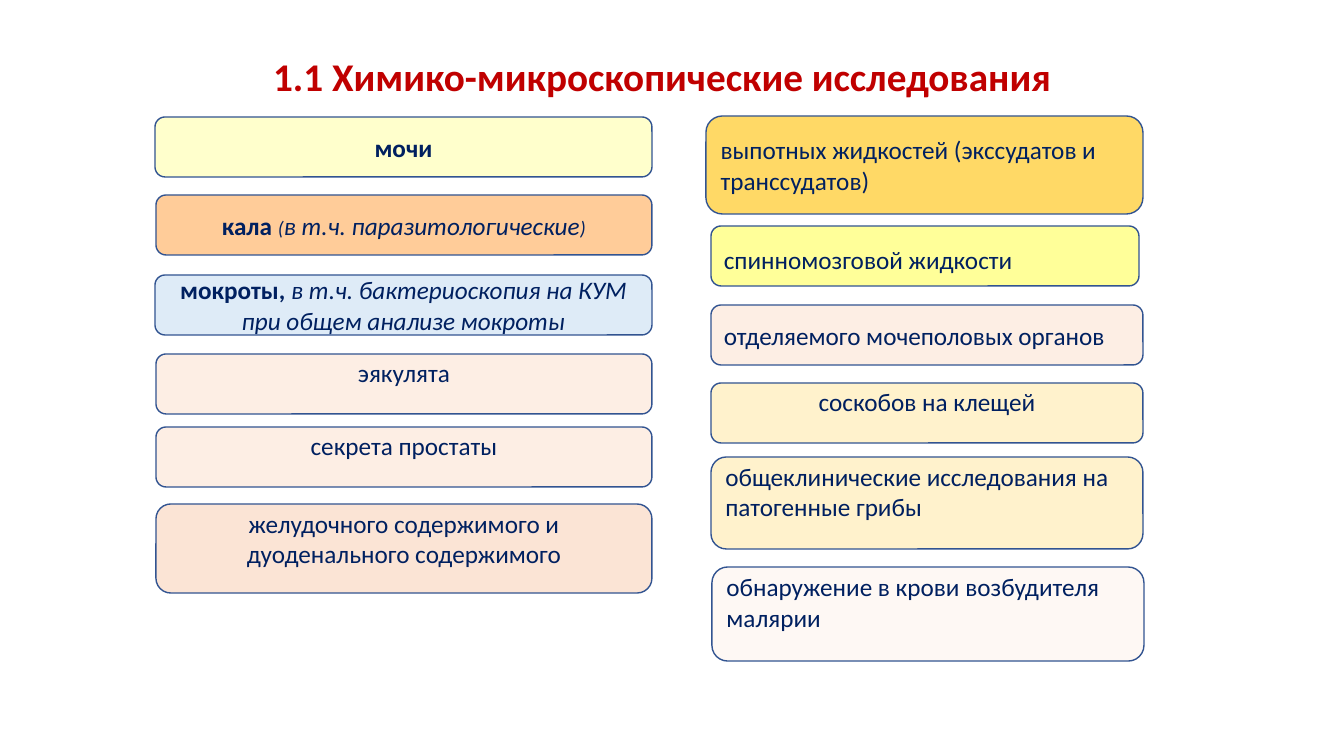
from pptx import Presentation
from pptx import util as u
from pptx.dml.color import RGBColor
from pptx.enum import shapes, text

PX = 12192000 / 1344

RED = RGBColor(0xC0, 0x00, 0x00)
NAVY = RGBColor(0x00, 0x20, 0x60)
EDGE = RGBColor(0x32, 0x54, 0x91)
CREAM = RGBColor(0xFF, 0xFF, 0xCC)
PEACH = RGBColor(0xFF, 0xCC, 0x99)
SKY = RGBColor(0xDE, 0xEB, 0xF7)
BLUSH = RGBColor(0xFD, 0xEE, 0xE4)
ROSE = RGBColor(0xFB, 0xE4, 0xD5)
GOLD = RGBColor(0xFF, 0xD9, 0x66)
LEMON = RGBColor(0xFF, 0xFF, 0x99)
SAND = RGBColor(0xFF, 0xF2, 0xCC)
PEARL = RGBColor(0xFE, 0xF8, 0xF4)

LEFT, MID = text.PP_ALIGN.LEFT, text.PP_ALIGN.CENTER


def px(n):
    return u.Emu(round(n * PX))


def plain(words):
    return [(words, 18, False, False)]


URINE = [("мочи", 18, True, False)]
STOOL = [
    ("кала ", 18, True, False),
    ("(", 14, False, True),
    ("в т.ч. паразитологические", 18, False, True),
    (")", 14, False, True),
]
SPUTUM = [
    ("мокроты, ", 18, True, False),
    ("в т.ч. бактериоскопия на КУМ при общем анализе мокроты", 18, False, True),
]

CARDS = [
    (155, 117, 497, 60, CREAM, MID, False, URINE),
    (156, 195, 496, 60, PEACH, MID, False, STOOL),
    (155, 275, 497, 60, SKY, MID, False, SPUTUM),
    (156, 354, 496, 60, BLUSH, MID, True, plain("эякулята")),
    (156, 427, 496, 60, BLUSH, MID, True, plain("секрета простаты")),
    (156, 504, 496, 89, ROSE, MID, True,
     plain("желудочного содержимого и дуоденального содержимого")),
    (706, 116, 437, 98, GOLD, LEFT, False,
     plain("выпотных жидкостей (экссудатов и транссудатов)")),
    (711, 226, 428, 60, LEMON, LEFT, False, plain("спинномозговой жидкости")),
    (711, 305, 432, 60, BLUSH, LEFT, False,
     plain("отделяемого мочеполовых органов")),
    (711, 383, 432, 60, SAND, MID, True, plain("соскобов на клещей")),
    (711, 457, 432, 92, SAND, LEFT, True,
     plain("общеклинические исследования на патогенные грибы")),
    (712, 567, 432, 94, PEARL, LEFT, True,
     plain("обнаружение в крови возбудителя малярии")),
]


def add_run(para, words, size, bold, slant, color):
    run = para.add_run()
    run.text = words
    font = run.font
    font.name = "Calibri"
    font.size = u.Pt(size)
    font.bold = bold
    font.italic = slant
    font.color.rgb = color


def set_title(slide, words):
    title = slide.shapes.title
    title.left, title.top = px(263), px(40)
    title.width, title.height = px(815), px(77)
    frame = title.text_frame
    frame.auto_size = text.MSO_AUTO_SIZE.NONE
    frame.word_wrap = True
    frame.vertical_anchor = text.MSO_ANCHOR.MIDDLE
    para = frame.paragraphs[0]
    para.alignment = LEFT
    para.line_spacing = 0.9
    add_run(para, words, 28, True, False, RED)


def add_card(slide, x, y, w, h, fill, align, high, runs):
    card = slide.shapes.add_shape(
        shapes.MSO_SHAPE.ROUNDED_RECTANGLE, px(x), px(y), px(w), px(h))
    card.shadow.inherit = False
    card.fill.solid()
    card.fill.fore_color.rgb = fill
    card.line.color.rgb = EDGE
    card.line.width = u.Pt(1)
    frame = card.text_frame
    frame.word_wrap = True
    frame.vertical_anchor = text.MSO_ANCHOR.MIDDLE
    if high:
        frame.vertical_anchor = text.MSO_ANCHOR.TOP
        frame.margin_top = 0
    para = frame.paragraphs[0]
    para.alignment = align
    if fill == LEMON:
        para.line_spacing = 1.2
    for run in runs:
        add_run(para, *run, NAVY)


def main():
    deck = Presentation()
    deck.slide_width, deck.slide_height = px(1344), px(756)
    slide = deck.slides.add_slide(deck.slide_layouts[5])
    set_title(slide, "1.1 Химико-микроскопические исследования")
    for card in CARDS:
        add_card(slide, *card)
    deck.save("out.pptx")


if __name__ == "__main__":
    main()
